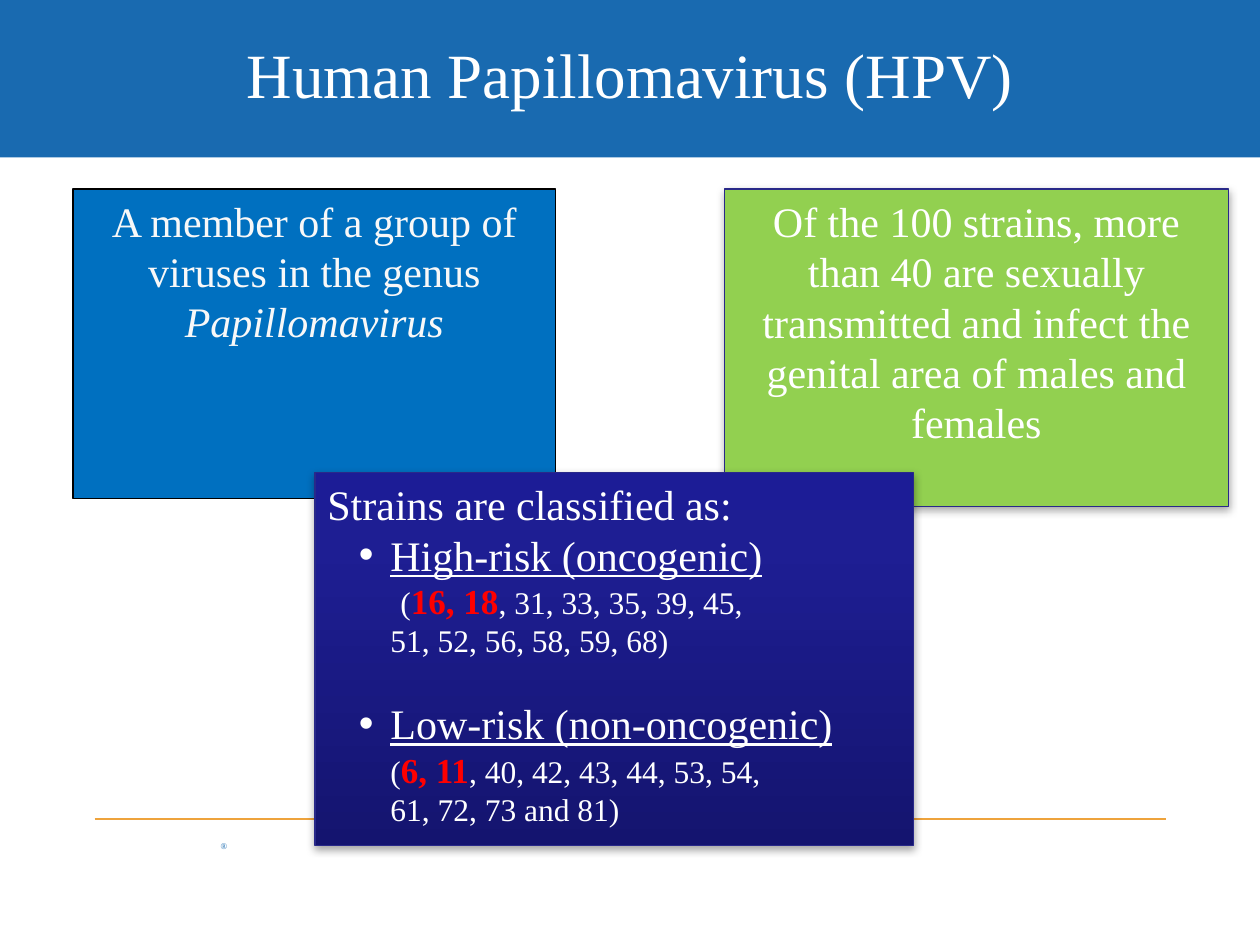
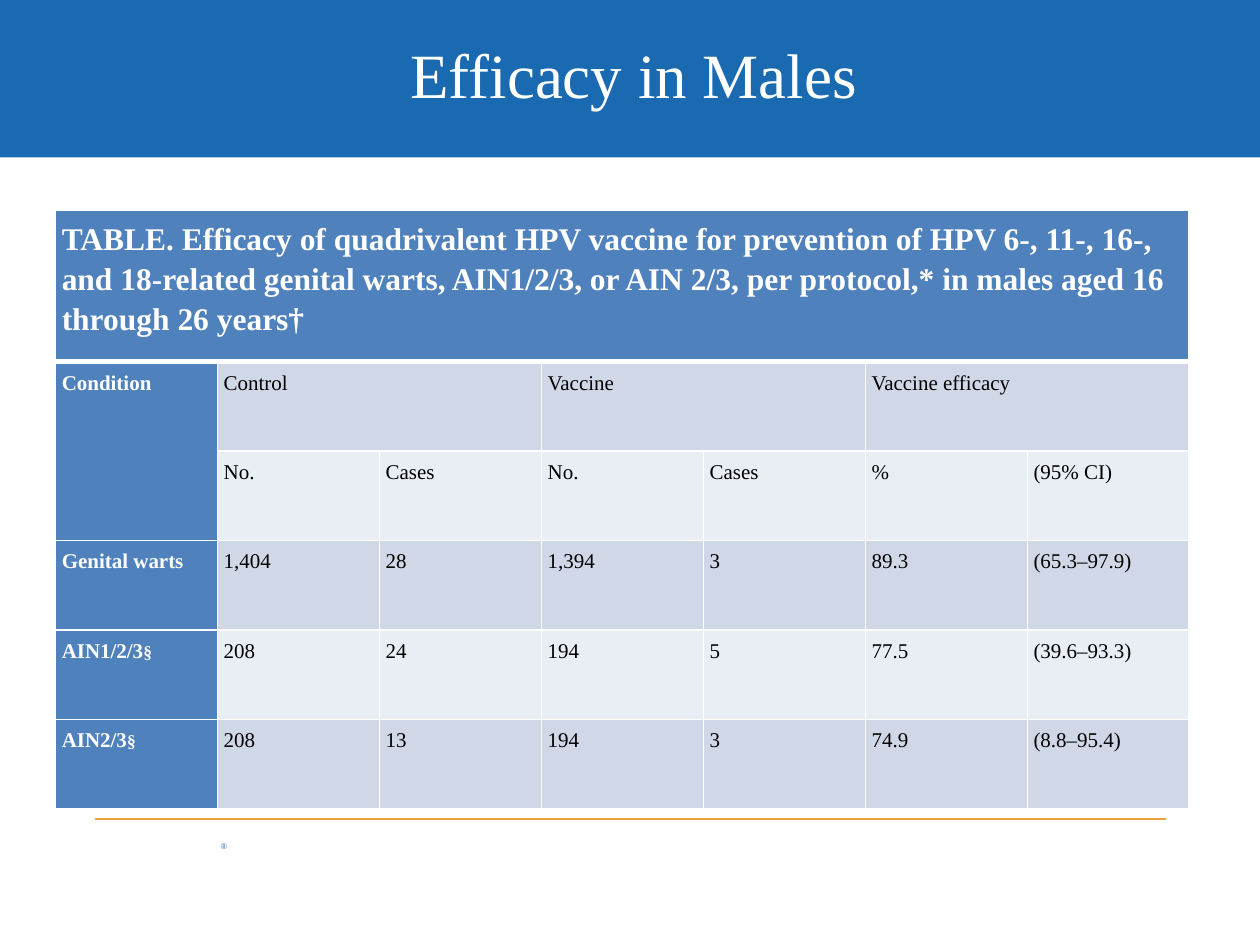
from dataclasses import dataclass
from typing import NamedTuple

from lxml.etree import SubElement
from pptx import Presentation
from pptx.dml.color import RGBColor
from pptx.enum.shapes import MSO_CONNECTOR, MSO_SHAPE
from pptx.enum.text import MSO_ANCHOR, PP_ALIGN
from pptx.oxml import parse_xml
from pptx.oxml.ns import nsdecls, qn
from pptx.util import Inches, Pt

# Shared look: a grid of 40 columns by 30 rows of a quarter inch
UNIT = 0.25
COLUMNS, ROWS = 40, 30
FONT = "Times New Roman"
WHITE, BLACK, RED = "FFFFFF", "000000", "FF0000"
BAND_BLUE, RULE_ORANGE, OUTLINE = "196AB0", "EEA33C", "292989"
HEADER_BLUE, DARK_STRIPE, LIGHT_STRIPE = "4F81BD", "D0D8E8", "E9EDF4"


class Area(NamedTuple):
    """Left, top, width and height in grid columns and rows."""
    left: float
    top: float
    width: float
    height: float


class Run(NamedTuple):
    text: str
    size: float = 24
    color: str = WHITE
    bold: bool = False
    italic: bool = False
    underline: bool = False


@dataclass
class Line:
    """One paragraph; margin and first-line indent are in inches."""
    runs: list[Run]
    align: PP_ALIGN = PP_ALIGN.LEFT
    margin: float = 0
    indent: float = 0
    bullet: bool = False
    before: float = 0
    after: float = 0
    spacing: float = 1.0


@dataclass
class Panel:
    area: Area
    fill: str | list[tuple[int, str]]
    outline: str
    outline_width: float
    shadow: bool
    lines: list[Line]


def grid(count: float) -> int:
    return Inches(count * UNIT)


def place(area: Area) -> list[int]:
    return [grid(length) for length in area]


def rgb(color: str) -> RGBColor:
    return RGBColor.from_string(color)


# Text
def write(paragraph, text: str, *, size: float, color: str, bold: bool = False,
          italic: bool = False, underline: bool = False) -> None:
    run = paragraph.add_run()
    run.text = text
    font = run.font
    font.name, font.size = FONT, Pt(size)
    font.bold, font.italic, font.underline = bold, italic, underline
    font.color.rgb = rgb(color)


def fill_frame(frame, lines: list[Line]) -> None:
    frame.word_wrap = True
    for number, line in enumerate(lines):
        paragraph = frame.add_paragraph() if number else frame.paragraphs[0]
        paragraph.alignment = line.align
        paragraph.line_spacing = line.spacing
        paragraph.space_before, paragraph.space_after = Pt(line.before), Pt(line.after)
        properties = paragraph._p.get_or_add_pPr()
        properties.set("marL", str(Inches(line.margin)))
        properties.set("indent", str(Inches(line.indent)))
        if line.bullet:
            SubElement(properties, qn("a:buFont")).set("typeface", "Arial")
            SubElement(properties, qn("a:buChar")).set("char", "•")
        else:
            SubElement(properties, qn("a:buNone"))
        for run in line.runs:
            write(paragraph, **run._asdict())


def add_text(slide, area: Area, line: Line, inset: bool = True) -> None:
    frame = slide.shapes.add_textbox(*place(area)).text_frame
    frame.vertical_anchor = MSO_ANCHOR.MIDDLE if inset else MSO_ANCHOR.TOP
    if not inset:
        frame.margin_left = frame.margin_right = 0
        frame.margin_top = frame.margin_bottom = 0
    fill_frame(frame, [line])


# Shapes
def add_box(slide, area: Area, fill: str | list[tuple[int, str]]):
    shape = slide.shapes.add_shape(MSO_SHAPE.RECTANGLE, *place(area))
    shape.shadow.inherit = False
    shape.line.fill.background()
    if isinstance(fill, str):
        shape.fill.solid()
        shape.fill.fore_color.rgb = rgb(fill)
    else:
        stops = "".join(f'<a:gs pos="{share * 1000}"><a:srgbClr val="{color}"/></a:gs>'
                        for share, color in fill)
        gradient = parse_xml(f'<a:gradFill {nsdecls("a")} rotWithShape="1"><a:gsLst>{stops}'
                             '</a:gsLst><a:lin ang="16200000" scaled="0"/></a:gradFill>')
        shape._element.spPr.find(qn("a:prstGeom")).addnext(gradient)
    return shape


def add_shadow(shape) -> None:
    effects = shape._element.spPr.find(qn("a:effectLst"))
    effects.append(parse_xml(
        f'<a:outerShdw {nsdecls("a")} blurRad="{Pt(5)}" dist="{Pt(1.8)}" dir="5400000" '
        f'rotWithShape="0"><a:srgbClr val="{BLACK}"><a:alpha val="35000"/></a:srgbClr>'
        '</a:outerShdw>'))


def add_panel(slide, panel: Panel) -> None:
    shape = add_box(slide, panel.area, panel.fill)
    shape.line.color.rgb = rgb(panel.outline)
    shape.line.width = Pt(panel.outline_width)
    if panel.shadow:
        add_shadow(shape)
    shape.text_frame.vertical_anchor = MSO_ANCHOR.TOP
    fill_frame(shape.text_frame, panel.lines)


def add_framed_slide(presentation, title: str, margin: float = 0):
    """Blank slide with the title band, footer rule and footer mark."""
    slide = presentation.slides.add_slide(presentation.slide_layouts[6])
    add_box(slide, Area(0, 0, COLUMNS, 5), BAND_BLUE)
    add_text(slide, Area(7, 26.68, 1, 0.32), Line([Run("®", 5, BAND_BLUE)]), inset=False)
    rule = slide.shapes.add_connector(MSO_CONNECTOR.STRAIGHT, grid(3), grid(26),
                                      grid(COLUMNS - 3), grid(26))
    rule.line.color.rgb = rgb(RULE_ORANGE)
    rule.line.width = Pt(0.75)
    SubElement(rule._element.spPr, qn("a:effectLst"))
    add_text(slide, Area(2, 0.32, COLUMNS - 4, 4),
             Line([Run(title, 36)], PP_ALIGN.CENTER, margin))
    return slide


# Slide 1: three overlapping panels
def strain_group(name: str, key_strains: str, others: str, last: str,
                 before: float = 0, indent: float = 0) -> list[Line]:
    return [
        Line([Run(name, underline=True)], margin=0.5, indent=-0.25, bullet=True, before=before),
        Line([Run("(", 18), Run(key_strains, 20, RED, bold=True), Run(others, 18)],
             margin=0.5, indent=indent),
        Line([Run(last, 18)], margin=0.5),
    ]


PANELS = [
    Panel(Area(2.32, 6, 15.32, 9.84), "0070C0", BLACK, 0, False, [
        Line([Run("A member of a group of viruses in the genus ", color="F8F8F8"),
              Run("Papillomavirus", color="F8F8F8", italic=True)], PP_ALIGN.CENTER)]),
    Panel(Area(23, 6, 16, 10.08), "92D050", OUTLINE, 0.75, True, [
        Line([Run("Of the 100 strains, more than 40 are sexually transmitted and infect "
                  "the genital area of males and females")], PP_ALIGN.CENTER)]),
    Panel(Area(10, 15, 19, 11.84), [(0, "14146F"), (80, "1E1E93"), (100, "1C1C96")],
          OUTLINE, 0.75, True, [
        Line([Run("Strains are classified as:")]),
        *strain_group("High-risk (oncogenic)", "16, 18", ", 31, 33, 35, 39, 45,",
                      "51, 52, 56, 58, 59, 68)", indent=0.08),
        *strain_group("Low-risk (non-oncogenic)", "6, 11", ", 40, 42, 43, 44, 53, 54,",
                      "61, 72, 73 and 81)", before=22)]),
]

# Slide 2: efficacy table; empty strings are covered by merged cells
TABLE_AREA = Area(1.76, 6.68, 36, 19)
TITLE_ROW_HEIGHT = 4.8
EFFICACY = [
    ["TABLE. Efficacy of quadrivalent HPV vaccine for prevention of HPV 6-, 11-, 16-, "
     "and 18-related genital warts, AIN1/2/3, or AIN 2/3, per protocol,* in males aged 16 "
     "through 26 years†", "", "", "", "", "", ""],
    ["Condition", "Control", "", "Vaccine", "", "Vaccine efficacy", ""],
    ["", "No.", "Cases", "No.", "Cases", "%", "(95% CI)"],
    ["Genital warts", "1,404", "28", "1,394", "3", "89.3", "(65.3–97.9)"],
    ["AIN1/2/3§", "208", "24", "194", "5", "77.5", "(39.6–93.3)"],
    ["AIN2/3§", "208", "13", "194", "3", "74.9", "(8.8–95.4)"],
]
MERGES = [((0, 0), (0, 6)), ((1, 0), (2, 0)), *(((1, left), (1, left + 1)) for left in (1, 3, 5))]


def set_borders(cell, row: int) -> None:
    widths = {"L": 1, "R": 1, "T": 3 if row == 1 else 1, "B": 3 if row == 0 else 1}
    for side, width in widths.items():
        cell._tc.get_or_add_tcPr().append(parse_xml(
            f'<a:ln{side} {nsdecls("a")} w="{Pt(width)}"><a:solidFill>'
            f'<a:srgbClr val="{WHITE}"/></a:solidFill></a:ln{side}>'))


def add_efficacy_table(slide) -> None:
    width = len(EFFICACY[0])
    table = slide.shapes.add_table(len(EFFICACY), width, *place(TABLE_AREA)).table
    table.first_row = table.horz_banding = False
    for column in table.columns:
        column.width = grid(TABLE_AREA.width / width)
    body_height = (TABLE_AREA.height - TITLE_ROW_HEIGHT) / (len(EFFICACY) - 1)
    for row, texts in enumerate(EFFICACY):
        table.rows[row].height = grid(body_height if row else TITLE_ROW_HEIGHT)
        for column, text in enumerate(texts):
            cell = table.cell(row, column)
            header = row == 0 or column == 0
            set_borders(cell, row)
            cell.fill.solid()
            stripe = DARK_STRIPE if row % 2 else LIGHT_STRIPE
            if row == len(EFFICACY) - 1 or row == 3:
                stripe = DARK_STRIPE
            elif row == 4:
                stripe = LIGHT_STRIPE
            cell.fill.fore_color.rgb = rgb(HEADER_BLUE if header else stripe)
            cell.margin_left = cell.margin_right = Inches(0.05)
            cell.margin_top = cell.margin_bottom = Inches(0.05)
            if text:
                color = WHITE if header else BLACK
                label, mark, _ = text.partition("§")
                runs = [Run(label, 12 if row else 18, color, bold=header)]
                if mark:
                    runs.append(Run(mark, 10, color, bold=header))
                fill_frame(cell.text_frame, [Line(runs, after=9, spacing=1.15)])
    for first, last in MERGES:
        table.cell(*first).merge(table.cell(*last))


def main() -> None:
    presentation = Presentation()
    presentation.slide_width, presentation.slide_height = grid(COLUMNS), grid(ROWS)

    virus_slide = add_framed_slide(presentation, "Human Papillomavirus (HPV)")
    for panel in PANELS:
        add_panel(virus_slide, panel)

    efficacy_slide = add_framed_slide(presentation, "Efficacy in Males", margin=0.06)
    add_efficacy_table(efficacy_slide)

    presentation.save("out.pptx")


if __name__ == "__main__":
    main()
